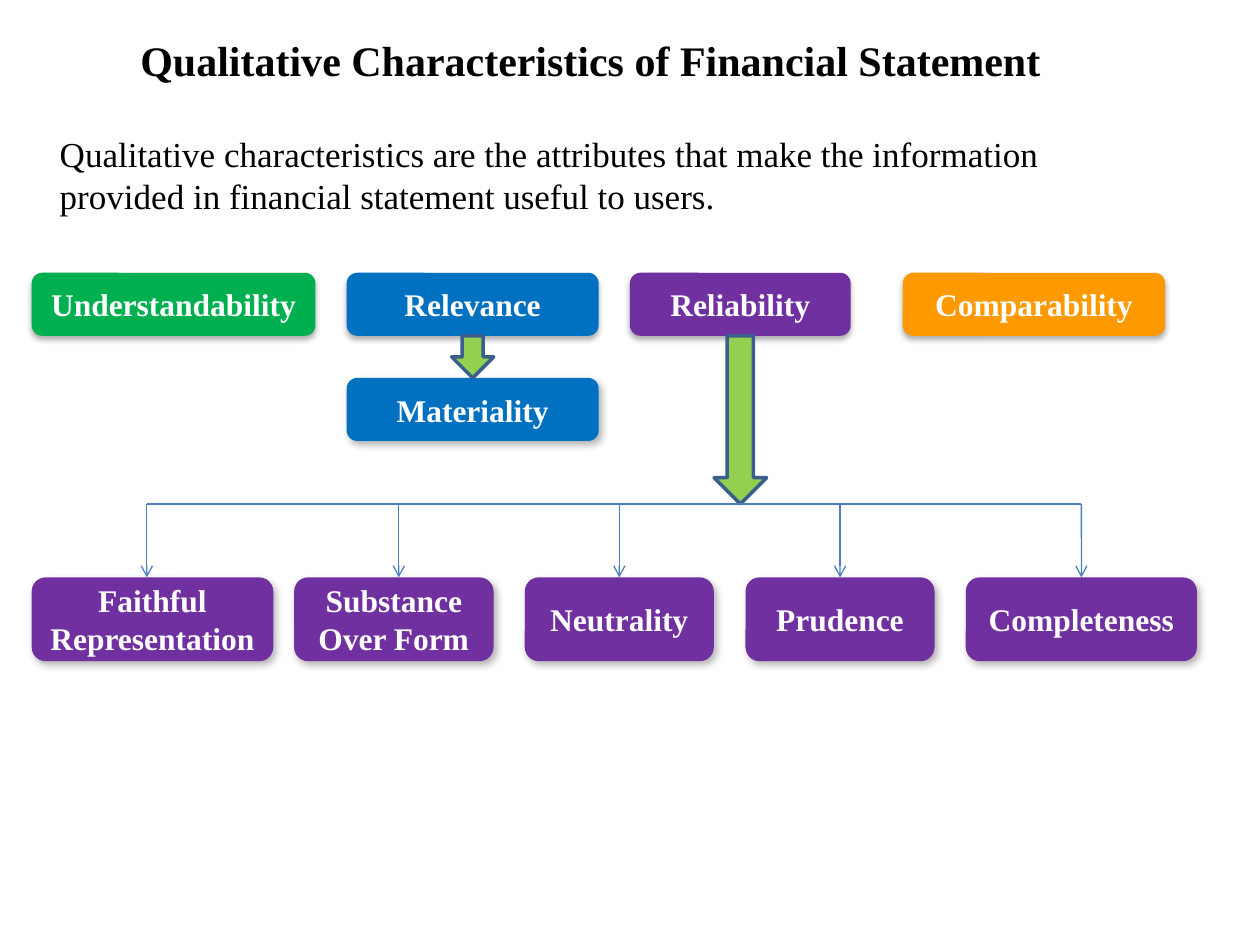
from dataclasses import dataclass
from typing import Optional

from lxml.etree import SubElement
from pptx import Presentation
from pptx.dml.color import RGBColor
from pptx.enum.shapes import MSO_CONNECTOR as Link, MSO_SHAPE as Preset
from pptx.enum.text import MSO_ANCHOR as Anchor, MSO_AUTO_SIZE as AutoSize, PP_ALIGN as Align
from pptx.oxml.ns import qn
from pptx.util import Cm, Pt

FONT = "Times New Roman"
BLACK = RGBColor(0x00, 0x00, 0x00)
WHITE = RGBColor(0xFF, 0xFF, 0xFF)
GREEN = RGBColor(0x00, 0xB0, 0x50)
BLUE = RGBColor(0x00, 0x70, 0xC0)
PURPLE = RGBColor(0x70, 0x30, 0xA0)
ORANGE = RGBColor(0xFF, 0x99, 0x00)
LIME = RGBColor(0x92, 0xD0, 0x50)
ARROW_EDGE = RGBColor(0x3A, 0x5F, 0x8C)
LINE_BLUE = RGBColor(0x4B, 0x7E, 0xBC)

# Vertical levels in centimetres
TOP_ROW, TOP_HEIGHT = 5.5, 1.27
MATERIALITY_TOP = 7.62
BRANCH_LINE = 10.16
BOTTOM_ROW, BOTTOM_HEIGHT = 11.64, 1.69


@dataclass(frozen=True)
class Shadow:
    opacity: int
    blur: float
    distance: float
    angle: int


SOFT = Shadow(32, 3.5, 2.2, 90)
SLANTED = Shadow(30, 4.5, 2.6, 53)


@dataclass(frozen=True)
class Card:
    text: str
    left: float
    top: float
    width: float
    height: float
    color: RGBColor
    shadow: Shadow
    drop_x: Optional[float] = None  # arrow position when it is off centre

    @property
    def center(self) -> float:
        return self.left + self.width / 2


def top_card(text: str, left: float, width: float, color: RGBColor) -> Card:
    return Card(text, left, TOP_ROW, width, TOP_HEIGHT, color, SOFT)


def component(text: str, left: float, width: float, drop_x: Optional[float] = None) -> Card:
    return Card(text, left, BOTTOM_ROW, width, BOTTOM_HEIGHT, PURPLE, SLANTED, drop_x)


RELEVANCE = top_card("Relevance", 6.99, 5.08, BLUE)
RELIABILITY = top_card("Reliability", 12.7, 4.45, PURPLE)
CHARACTERISTICS = [
    top_card("Understandability", 0.64, 5.72, GREEN),
    RELEVANCE,
    RELIABILITY,
    top_card("Comparability", 18.2, 5.29, ORANGE),
    Card("Materiality", 6.99, MATERIALITY_TOP, 5.08, TOP_HEIGHT, BLUE, SLANTED),
]
COMPONENTS = [
    component("Faithful Representation", 0.64, 4.87, drop_x=2.96),
    component("Substance Over Form", 5.93, 4.02, drop_x=8.04),
    component("Neutrality", 10.58, 3.81),
    component("Prudence", 15.03, 3.81),
    component("Completeness", 19.47, 4.66),
]


def write(box, text: str, *, size: float, color: RGBColor, bold: bool = False,
          align: Align = Align.LEFT, anchor: Anchor = Anchor.TOP) -> None:
    frame = box.text_frame
    frame.word_wrap = True
    frame.auto_size = AutoSize.NONE
    frame.vertical_anchor = anchor
    para = frame.paragraphs[0]
    para.alignment = align
    para.space_before = Pt(0)
    span = para.add_run()
    span.text = text
    span.font.name = FONT
    span.font.size = Pt(size)
    span.font.bold = bold
    span.font.color.rgb = color


def place(box, left: float, top: float, width: float, height: float) -> None:
    box.left, box.top, box.width, box.height = map(Cm, (left, top, width, height))


def add_shadow(box, shadow: Shadow) -> None:
    box.shadow.inherit = False
    effects = box._element.spPr.find(qn("a:effectLst"))
    outer = SubElement(effects, qn("a:outerShdw"), blurRad=str(Pt(shadow.blur)),
                       dist=str(Pt(shadow.distance)), dir=str(shadow.angle * 60000),
                       algn="ctr", rotWithShape="0")
    shade = SubElement(outer, qn("a:srgbClr"), val=str(BLACK))
    SubElement(shade, qn("a:alpha"), val=str(shadow.opacity * 1000))


def add_card(page, card: Card):
    box = page.shapes.add_shape(Preset.ROUNDED_RECTANGLE, Cm(card.left), Cm(card.top),
                                Cm(card.width), Cm(card.height))
    box.fill.solid()
    box.fill.fore_color.rgb = card.color
    box.line.fill.background()
    add_shadow(box, card.shadow)
    write(box, card.text, size=18, color=WHITE, bold=True,
          align=Align.CENTER, anchor=Anchor.MIDDLE)
    return box


def add_block_arrow(page, source: Card, width: float, bottom: float) -> None:
    top = source.top + source.height
    arrow = page.shapes.add_shape(Preset.DOWN_ARROW, Cm(source.center - width / 2), Cm(top),
                                  Cm(width), Cm(bottom - top))
    arrow.shadow.inherit = False
    arrow.fill.solid()
    arrow.fill.fore_color.rgb = LIME
    arrow.line.color.rgb = ARROW_EDGE
    arrow.line.width = Pt(2)


def add_line(page, x1: float, y1: float, x2: float, y2: float, *, head: bool = False):
    line = page.shapes.add_connector(Link.STRAIGHT, Cm(x1), Cm(y1), Cm(x2), Cm(y2))
    line.line.color.rgb = LINE_BLUE
    line.line.width = Pt(0.75)
    if head:
        SubElement(line.line._get_or_add_ln(), qn("a:tailEnd"), type="arrow")
    SubElement(line._element.spPr, qn("a:effectLst"))
    return line


def main() -> None:
    deck = Presentation()
    deck.slide_width, deck.slide_height = Cm(25.4), Cm(19.05)
    page = deck.slides.add_slide(deck.slide_layouts[1])

    # Title and definition
    title, body = page.placeholders
    place(title, 2.22, 0.56, 19.37, 1.27)
    write(title, "Qualitative Characteristics of Financial Statement",
          size=24, color=BLACK, bold=True, align=Align.CENTER)
    place(body, 0.95, 2.54, 22.4, 1.96)
    props = body.text_frame.paragraphs[0]._p.get_or_add_pPr()
    props.set("marL", "0")
    props.set("indent", "0")
    SubElement(props, qn("a:buNone"))
    write(body, "Qualitative characteristics are the attributes that make the information "
          "provided in financial statement useful to users.", size=20, color=BLACK)

    # Characteristics and their block arrows
    for card in CHARACTERISTICS:
        add_card(page, card)
    add_block_arrow(page, RELEVANCE, 0.85, MATERIALITY_TOP)
    add_block_arrow(page, RELIABILITY, 1.06, BRANCH_LINE)

    # Components of reliability, hung from the branch line
    drops = [card.drop_x or card.center for card in COMPONENTS]
    add_line(page, drops[0], BRANCH_LINE, drops[-1], BRANCH_LINE)
    for card, x in zip(COMPONENTS, drops):
        box = add_card(page, card)
        arrow = add_line(page, x, BRANCH_LINE, x, BOTTOM_ROW, head=True)
        if card.drop_x is None:
            arrow.end_connect(box, 0)

    deck.save("out.pptx")


if __name__ == "__main__":
    main()
